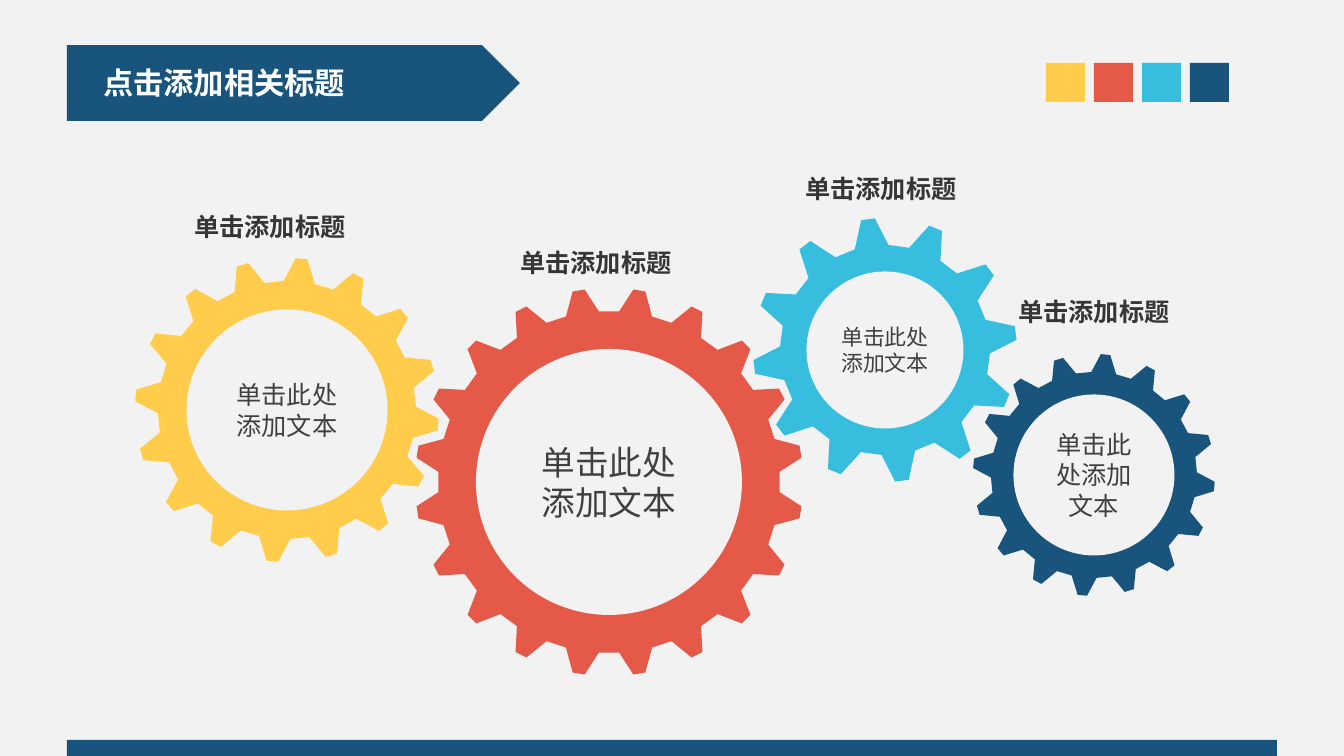
from dataclasses import dataclass
from math import cos, radians, sin

from lxml.etree import SubElement
from pptx import Presentation
from pptx.dml.color import RGBColor
from pptx.enum.shapes import MSO_SHAPE
from pptx.enum.text import MSO_ANCHOR, PP_ALIGN
from pptx.oxml.ns import qn
from pptx.util import Pt

EMU_PER_PX = 914400 / 121
CJK_FONT = "Noto Sans CJK SC"
YELLOW, RED, BLUE, NAVY = "FFCC4C", "E55948", "37BEDE", "19547C"
PALE = "F2F2F2"


@dataclass
class Gear:
    cx: int
    cy: int
    tip_radius: int
    root_radius: int
    hole: int
    teeth: int
    phase: float
    color: str
    font_size: int
    label_cx: int
    label_top: int


GEARS = [
    Gear(609, 482, 194, 171, 266, 20, 9, RED, 20, 596, 240),
    Gear(885, 350, 132, 105, 157, 12, -7.4, BLUE, 13, 881, 166),
    Gear(287, 410, 152, 129, 201, 16, 5.5, YELLOW, 15, 270, 204),
    Gear(1094, 475, 121, 103, 161, 16, 5.5, NAVY, 15, 1094, 289),
]


def px(n):
    return round(n * EMU_PER_PX)


def rgb(color):
    return RGBColor.from_string(color)


def paint(sp, color):
    sp.fill.solid()
    sp.fill.fore_color.rgb = rgb(color)
    sp.line.fill.background()
    sp.shadow.inherit = False


def add_block(s, kind, left, top, width, height, color):
    sp = s.shapes.add_shape(kind, px(left), px(top), px(width), px(height))
    paint(sp, color)
    return sp


def write(tf, text, size, color, font=CJK_FONT, bold=False, align=PP_ALIGN.CENTER):
    p = tf.paragraphs[0]
    p.text = text
    p.alignment = align
    p.font.size = Pt(size)
    p.font.bold = bold
    p.font.name = font
    p.font.color.rgb = rgb(color)
    # Chinese glyphs take the East Asian typeface
    defaults = p._p.pPr.find(qn("a:defRPr"))
    SubElement(defaults, qn("a:ea"), typeface=CJK_FONT)


def gear_outline(gear):
    """Four corners per tooth: root, tip, tip, root."""
    pitch = 360 / gear.teeth
    corners = [(-0.31, gear.root_radius), (-0.1, gear.tip_radius),
               (0.1, gear.tip_radius), (0.31, gear.root_radius)]
    points = []
    for tooth in range(gear.teeth):
        for offset, radius in corners:
            angle = radians(gear.phase + (tooth + offset) * pitch)
            points.append((px(gear.cx + radius * sin(angle)),
                           px(gear.cy - radius * cos(angle))))
    return points


def add_gear(s, gear):
    start, *rest = gear_outline(gear)
    builder = s.shapes.build_freeform(*start)
    builder.add_line_segments(rest, close=True)
    paint(builder.convert_to_shape(), gear.color)

    hole = add_block(s, MSO_SHAPE.OVAL, gear.cx - gear.hole / 2,
                     gear.cy - gear.hole / 2, gear.hole, gear.hole, PALE)
    tf = hole.text_frame
    tf.word_wrap = True
    tf.vertical_anchor = MSO_ANCHOR.MIDDLE
    tf.margin_left = tf.margin_right = px(11)
    write(tf, "单击此处添加文本", gear.font_size, "404040", font="Calibri")


def add_label(s, gear):
    width = 252
    box = s.shapes.add_textbox(px(gear.label_cx - width / 2), px(gear.label_top),
                               px(width), px(44))
    tf = box.text_frame
    tf.word_wrap = True
    tf.margin_left = tf.margin_right = px(13)
    tf.margin_top = tf.margin_bottom = px(7)
    write(tf, "单击添加标题", 15, "363636", bold=True)


def add_heading(s):
    banner = add_block(s, MSO_SHAPE.PENTAGON, 67, 45, 453, 76, NAVY)
    title = s.shapes.title
    title.element.addprevious(banner.element)
    title.left, title.top, title.width, title.height = px(91), px(58), px(269), px(48)
    tf = title.text_frame
    tf.word_wrap = False
    tf.vertical_anchor = MSO_ANCHOR.MIDDLE
    write(tf, "点击添加相关标题", 18, "FFFFFF", bold=True, align=PP_ALIGN.LEFT)


def main():
    prs = Presentation()
    prs.slide_width, prs.slide_height = px(1344), px(756)
    s = prs.slides.add_slide(prs.slide_layouts.get_by_name("Title Only"))
    s.background.fill.solid()
    s.background.fill.fore_color.rgb = rgb(PALE)

    add_heading(s)
    add_block(s, MSO_SHAPE.RECTANGLE, 67, 740, 1210, 16, NAVY)
    for i, color in enumerate([YELLOW, RED, BLUE, NAVY]):
        add_block(s, MSO_SHAPE.RECTANGLE, 1046 + 48 * i, 63, 39, 39, color)
    for gear in GEARS:
        add_gear(s, gear)
    for gear in GEARS:
        add_label(s, gear)

    prs.save("out.pptx")


if __name__ == "__main__":
    main()
